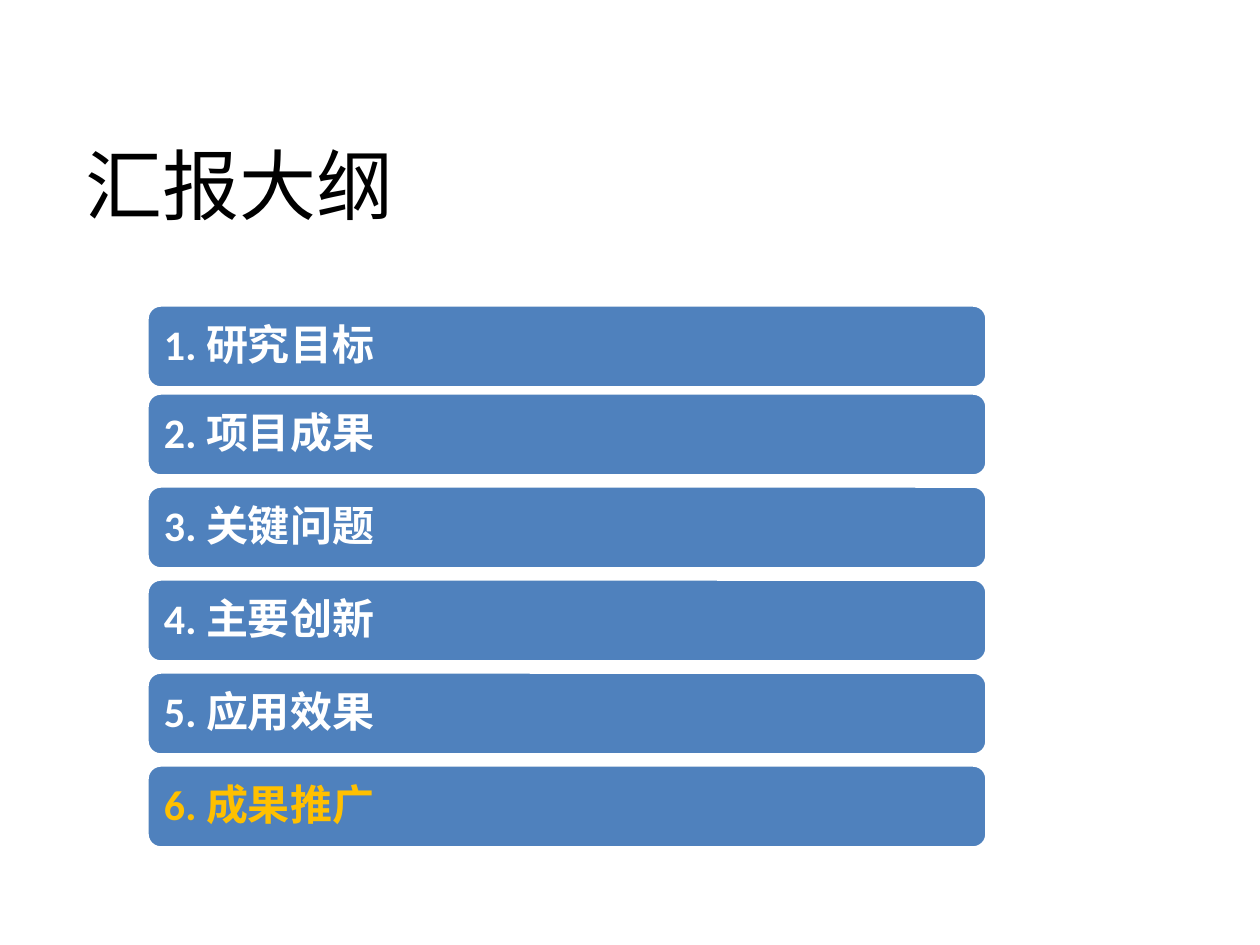
from dataclasses import dataclass

from lxml import etree
from pptx import Presentation
from pptx.dml.color import RGBColor
from pptx.enum import shapes, text
from pptx.oxml.ns import qn
from pptx.util import Emu, Pt

PX = 914400 / 126
BLACK = RGBColor(0x00, 0x00, 0x00)
WHITE = RGBColor(0xFF, 0xFF, 0xFF)
BLUE = RGBColor(0x4F, 0x81, 0xBD)
GOLD = RGBColor(0xFF, 0xC0, 0x00)
CJK_FONT = "Noto Sans CJK SC"

BAR_LEFT, BAR_WIDTH, BAR_HEIGHT = 147, 840, 83
FIRST_TOP, SECOND_TOP, BAR_PITCH = 305, 393, 93
INSET = 13


@dataclass(frozen=True)
class Topic:
    label: str
    color: RGBColor = WHITE


TOPICS = [
    Topic("1. 研究目标"),
    Topic("2. 项目成果"),
    Topic("3. 关键问题"),
    Topic("4. 主要创新"),
    Topic("5. 应用效果"),
    Topic("6. 成果推广", GOLD),
]


def px(n: int) -> Emu:
    return Emu(round(n * PX))


def write(tf, label: str, font: str, size: int, color: RGBColor, bold: bool = False):
    """Fill a text frame with one left-aligned, vertically centred line."""
    tf.word_wrap = True
    tf.vertical_anchor = text.MSO_ANCHOR.MIDDLE
    tf.text = label
    p = tf.paragraphs[0]
    p.alignment = text.PP_ALIGN.LEFT
    r = p.runs[0]
    r.font.name, r.font.size, r.font.bold = font, Pt(size), bold
    r.font.color.rgb = color
    etree.SubElement(r.font._element, qn("a:ea")).set("typeface", CJK_FONT)
    return p


def add_title(slide, label: str) -> None:
    s = slide.shapes.add_textbox(px(73), px(105), px(1134), px(157))
    write(s.text_frame, label, CJK_FONT, 44, BLACK)


def add_bar(slide, topic: Topic, top: int) -> None:
    s = slide.shapes.add_shape(shapes.MSO_SHAPE.ROUNDED_RECTANGLE,
                               px(BAR_LEFT), px(top), px(BAR_WIDTH), px(BAR_HEIGHT))
    s.shadow.inherit = False
    s.fill.solid()
    s.fill.fore_color.rgb = BLUE
    s.line.color.rgb = WHITE
    s.line.width = Pt(2)
    tf = s.text_frame
    tf.margin_left = tf.margin_right = tf.margin_top = tf.margin_bottom = px(INSET)
    p = write(tf, topic.label, "Calibri", 24, topic.color, bold=True)
    p.line_spacing = 0.9
    p.space_after = Pt(8.4)


def main() -> None:
    prs = Presentation()
    prs.slide_width, prs.slide_height = px(1260), px(945)
    slide = prs.slides.add_slide(prs.slide_layouts[6])
    add_title(slide, "汇报大纲")
    for i, topic in enumerate(TOPICS):
        top = SECOND_TOP + (i - 1) * BAR_PITCH if i else FIRST_TOP
        add_bar(slide, topic, top)
    prs.save("out.pptx")


if __name__ == "__main__":
    main()
